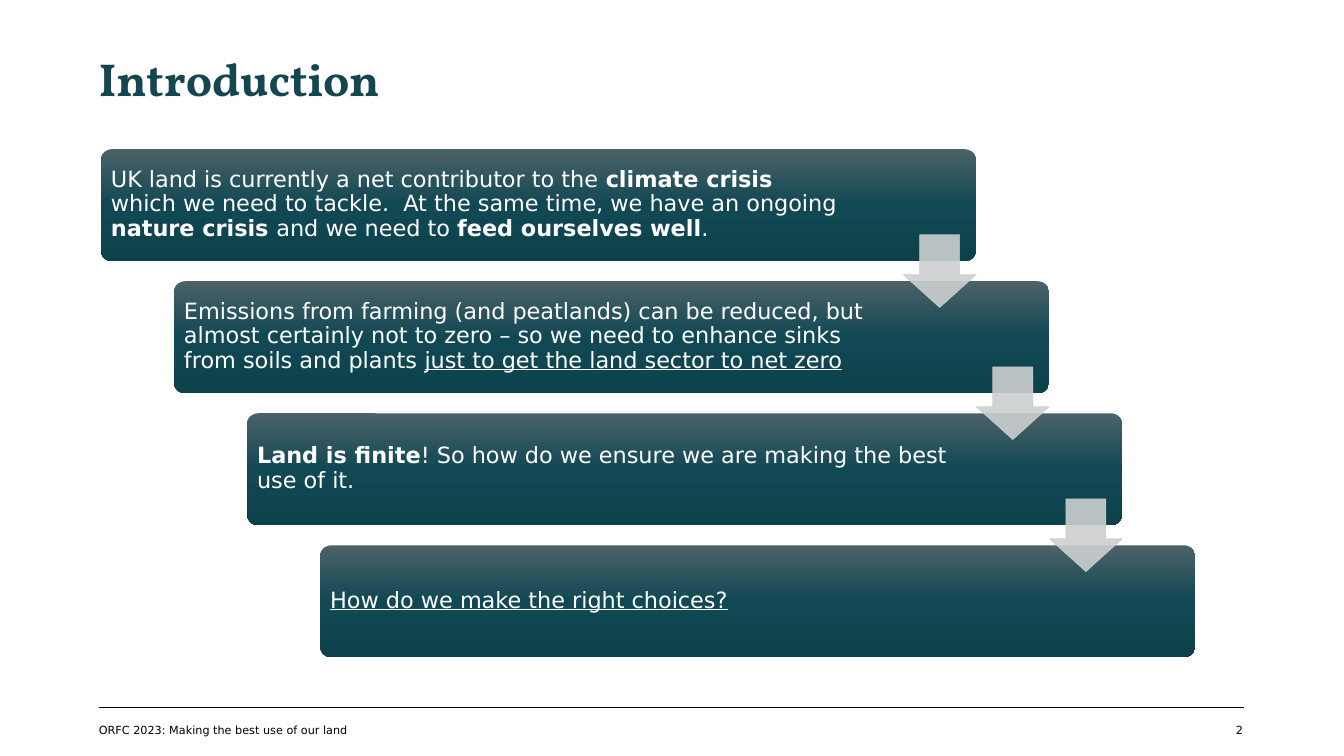
from lxml.etree import SubElement
from pptx import Presentation
from pptx.dml.color import RGBColor
from pptx.enum.shapes import MSO_CONNECTOR, MSO_SHAPE
from pptx.enum.text import MSO_ANCHOR, MSO_AUTO_SIZE, PP_ALIGN
from pptx.oxml import parse_xml
from pptx.oxml.ns import nsdecls, qn
from pptx.util import Inches, Pt


def rgb(value):
    return RGBColor.from_string(value)


def write(sp, runs, size, color, font="DejaVu Sans", inset=0, align=PP_ALIGN.LEFT):
    """Fill a text frame with (text, extra font values) runs."""
    tf = sp.text_frame
    frame_format = {
        "word_wrap": True,
        "auto_size": MSO_AUTO_SIZE.NONE,
        "vertical_anchor": MSO_ANCHOR.MIDDLE,
        "margin_left": Inches(inset),
        "margin_top": Inches(inset),
        "margin_right": Inches(inset),
        "margin_bottom": Inches(inset),
    }
    for name, value in frame_format.items():
        setattr(tf, name, value)
    p = tf.paragraphs[0]
    p.alignment = align
    for text, extra in runs:
        r = p.add_run()
        r.text = text
        for name, value in {"name": font, "size": Pt(size), **extra}.items():
            setattr(r.font, name, value)
        r.font.color.rgb = rgb(color)
    return p


prs = Presentation()
prs.slide_width, prs.slide_height = Inches(13.33), Inches(7.5)
s = prs.slides.add_slide(prs.slide_layouts[5])

# Footer: rule, event name and page number
rule = s.shapes.add_connector(
    MSO_CONNECTOR.STRAIGHT, Inches(0.98), Inches(7.02), Inches(12.34), Inches(7.02))
rule.line.color.rgb = rgb("000000")
rule.line.width = Pt(0.5)
SubElement(rule._element.spPr, qn("a:effectLst"))

footers = [
    (0.98, 10.36, "ORFC 2023: Making the best use of our land", PP_ALIGN.LEFT),
    (11.53, 0.8, "2", PP_ALIGN.RIGHT),
]
for left, width, text, align in footers:
    sp = s.shapes.add_textbox(Inches(left), Inches(7.18), Inches(width), Inches(0.13))
    write(sp, [(text, {})], 8, "000000", align=align)

# Title
title = s.shapes.title
title.left, title.top = Inches(0.98), Inches(0.54)
title.width, title.height = Inches(9.8), Inches(0.53)
p = write(title, [("Introduction", {"bold": True})], 33, "144650", font="Vollkorn")
p.line_spacing = 0.9

# Staircase of steps: text width and runs
bold, underline = {"bold": True}, {"underline": True}
steps = [
    (7.39, [
        ("UK land is currently a net contributor to the ", {}),
        ("climate crisis ", bold),
        ("which we need to tackle.  At the same time, we have an ongoing ", {}),
        ("nature crisis ", bold),
        ("and we need to ", {}),
        ("feed ourselves well", bold),
        (".", {}),
    ]),
    (7.17, [
        ("Emissions from farming (and peatlands) can be reduced, but almost certainly "
         "not to zero – so we need to enhance sinks from soils and plants ", {}),
        ("just to get the land sector to net zero", underline),
    ]),
    (7.17, [
        ("Land is finite", bold),
        ("! So how do we ensure we are making the best use of it.", {}),
    ]),
    (7.17, [("How do we make the right choices?", underline)]),
]
step_x, step_y = 0.725, 1.31
gradient = [(0, "4C6269"), (50, "114853"), (100, "0C424C")]
stops = "".join(
    f'<a:gs pos="{pos * 1000}"><a:srgbClr val="{color}"/></a:gs>' for pos, color in gradient)

for i, (width, runs) in enumerate(steps):
    left, top = 1 + i * step_x, 1.48 + i * step_y
    sp = s.shapes.add_shape(
        MSO_SHAPE.ROUNDED_RECTANGLE, Inches(left), Inches(top), Inches(8.68), Inches(1.11))
    sp.adjustments[0] = 0.1
    sp.shadow.inherit = False
    sp.line.fill.background()
    sp._element.spPr.find(qn("a:prstGeom")).addnext(parse_xml(
        f'<a:gradFill {nsdecls("a")} rotWithShape="1"><a:gsLst>{stops}</a:gsLst>'
        '<a:lin ang="5400000" scaled="0"/></a:gradFill>'))

    sp = s.shapes.add_textbox(
        Inches(left + 0.03), Inches(top + 0.03), Inches(width), Inches(1.04))
    p = write(sp, runs, 16, "FFFFFF", inset=0.07)
    p.line_spacing = 0.9

# Arrows from each step to the next
for i in range(len(steps) - 1):
    sp = s.shapes.add_shape(
        MSO_SHAPE.DOWN_ARROW, Inches(8.96 + i * step_x), Inches(2.33 + i * step_y),
        Inches(0.72), Inches(0.72))
    sp.adjustments[0], sp.adjustments[1] = 0.55, 0.45
    sp.shadow.inherit = False
    sp.fill.solid()
    sp.fill.fore_color.rgb = rgb("CCCFD0")
    sp.line.color.rgb = rgb("CCCFD0")
    sp.line.width = Pt(0.5)
    for color in sp._element.spPr.iter(qn("a:srgbClr")):
        SubElement(color, qn("a:alpha"), val="90000")

prs.save("out.pptx")
